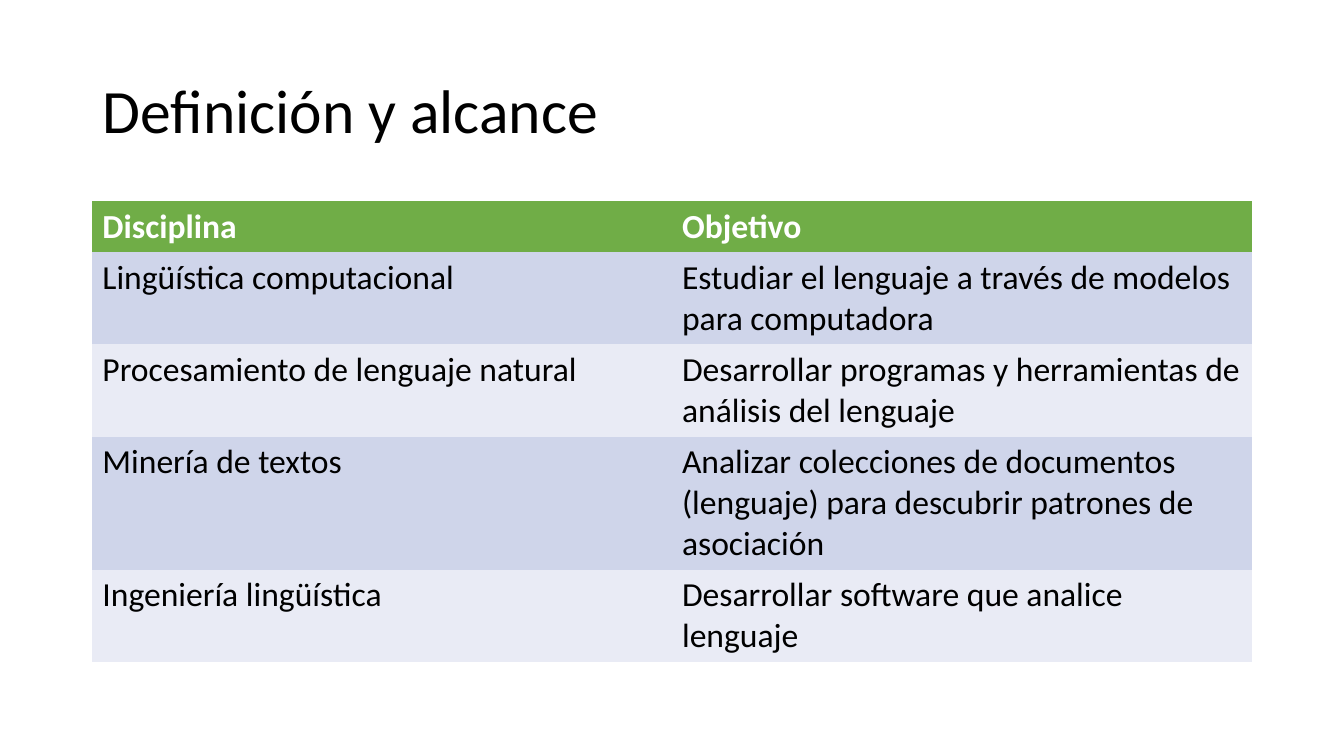
from pptx import Presentation
from pptx.dml import color
from pptx.enum import text
from pptx.util import Pt

FONT = "Calibri"
BLACK, WHITE = "000000", "FFFFFF"
HEADER_FILL = "70AD47"
BAND_FILLS = ("CFD5EA", "E9EBF5")
NO_STYLE_NO_GRID = "{2D5ABB26-0587-4C30-8999-92F81FD0307C}"

LEFT, WIDTH = 66, 828
ROW_HEIGHT = 29.5

HEADER = ("Disciplina", "Objetivo")
DISCIPLINES = (
    ("Lingüística computacional",
     "Estudiar el lenguaje a través de modelos para computadora"),
    ("Procesamiento de lenguaje natural",
     "Desarrollar programas y herramientas de análisis del lenguaje"),
    ("Minería de textos",
     "Analizar colecciones de documentos (lenguaje) para descubrir patrones de asociación"),
    ("Ingeniería lingüística",
     "Desarrollar software que analice lenguaje"),
)


def rgb(hex_string):
    return color.RGBColor.from_string(hex_string)


def add_run(paragraph, content, size, hex_color, bold=False):
    run = paragraph.add_run()
    run.text = content
    run.font.name = FONT
    run.font.size = Pt(size)
    run.font.bold = bold
    run.font.color.rgb = rgb(hex_color)


def set_title(slide, content):
    title = slide.shapes.title
    title.left, title.top = Pt(LEFT), Pt(28.75)
    title.width, title.height = Pt(WIDTH), Pt(104.4)
    frame = title.text_frame
    frame.word_wrap = True
    frame.vertical_anchor = text.MSO_ANCHOR.MIDDLE
    paragraph = frame.paragraphs[0]
    paragraph.alignment = text.PP_ALIGN.LEFT
    paragraph.line_spacing = 0.9
    add_run(paragraph, content, 44, BLACK)


def fill_cell(cell, content, fill, hex_color, bold=False, spacing=0):
    cell.fill.solid()
    cell.fill.fore_color.rgb = rgb(fill)
    paragraph = cell.text_frame.paragraphs[0]
    paragraph.space_before = paragraph.space_after = Pt(spacing)
    add_run(paragraph, content, 24, hex_color, bold)


def add_discipline_table(slide):
    row_count = len(DISCIPLINES) + 1
    frame = slide.shapes.add_table(
        row_count, len(HEADER), Pt(LEFT), Pt(143.75),
        Pt(WIDTH), Pt(ROW_HEIGHT * row_count))
    table = frame.table

    # Plain table style: the cell fills alone make the bands
    style = table._tbl.tblPr.find(
        "{http://schemas.openxmlformats.org/drawingml/2006/main}tableStyleId")
    style.text = NO_STYLE_NO_GRID

    # Header row
    for column, heading in enumerate(HEADER):
        fill_cell(table.cell(0, column), heading, HEADER_FILL, WHITE, bold=True)

    # Banded body rows
    for row, entries in enumerate(DISCIPLINES, start=1):
        fill = BAND_FILLS[(row - 1) % 2]
        for column, entry in enumerate(entries):
            fill_cell(table.cell(row, column), entry, fill, BLACK, spacing=6)


def main():
    presentation = Presentation()
    presentation.slide_width, presentation.slide_height = Pt(960), Pt(540)
    title_only = presentation.slide_layouts[5]
    slide = presentation.slides.add_slide(title_only)
    set_title(slide, "Definición y alcance")
    add_discipline_table(slide)
    presentation.save("out.pptx")


if __name__ == "__main__":
    main()
